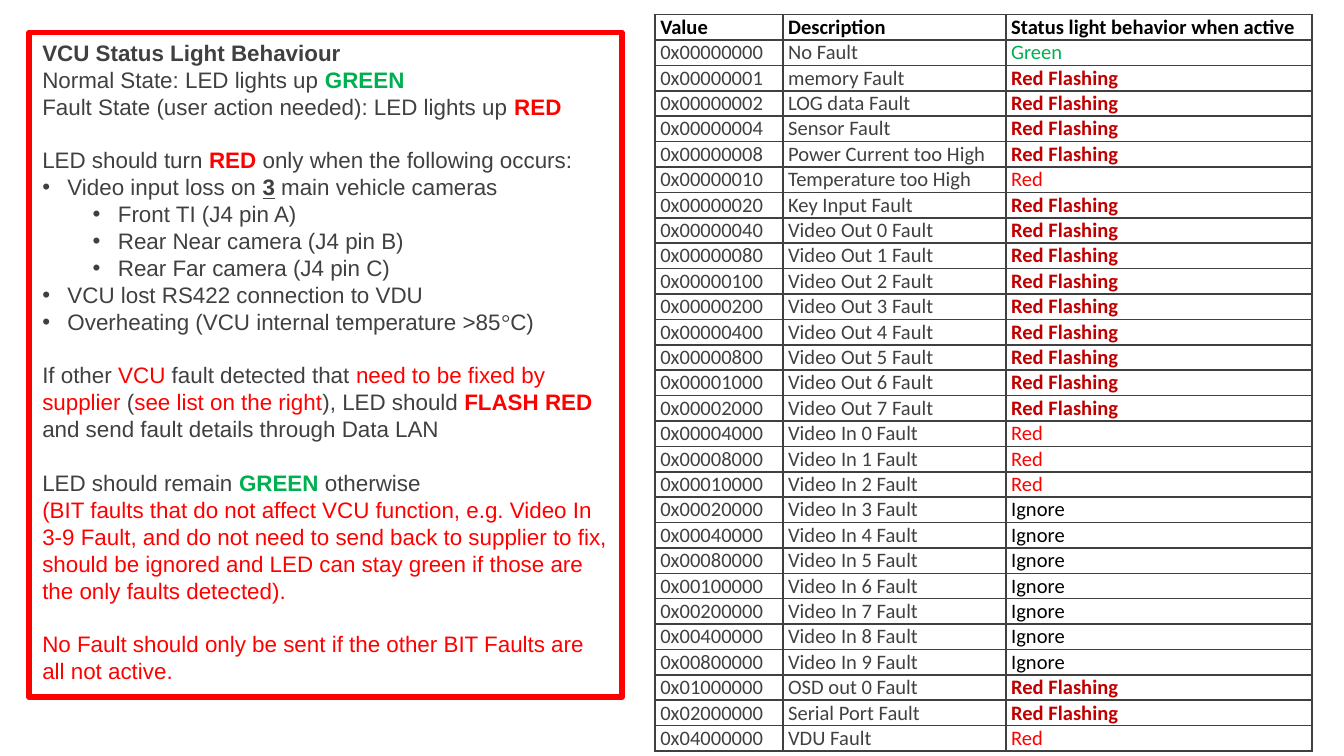
from lxml.etree import SubElement
from pptx import Presentation
from pptx.dml.color import RGBColor
from pptx.enum.shapes import MSO_SHAPE
from pptx.enum.text import MSO_ANCHOR, PP_ALIGN
from pptx.oxml.ns import qn
from pptx.util import Pt

GRAY = RGBColor(0x40, 0x40, 0x40)
BLACK = RGBColor(0x00, 0x00, 0x00)
GREEN = RGBColor(0x00, 0xB0, 0x50)
RED = RGBColor(0xFF, 0x00, 0x00)
DARK_RED = RGBColor(0xC0, 0x00, 0x00)
LINE_PITCH = Pt(14.4)
ROW_HEIGHT = Pt(13.2)


def add_bullet(paragraph, indent):
    properties = paragraph._p.get_or_add_pPr()
    properties.set("marL", str(Pt(indent)))
    properties.set("indent", str(Pt(-13.5)))
    SubElement(properties, qn("a:buFont")).set("typeface", "Arial")
    SubElement(properties, qn("a:buChar")).set("char", "•")


def add_borders(cell):
    properties = cell._tc.get_or_add_tcPr()
    for position, side in enumerate(("lnL", "lnR", "lnT", "lnB")):
        border = properties.makeelement(qn(f"a:{side}"), {"w": str(Pt(1))})
        fill = SubElement(border, qn("a:solidFill"))
        SubElement(fill, qn("a:srgbClr")).set("val", str(GRAY))
        properties.insert(position, border)


presentation = Presentation()
presentation.slide_width = Pt(720)
presentation.slide_height = Pt(405)
slide = presentation.slides.add_slide(presentation.slide_layouts[6])

faults = [
    ("No Fault", "Green"),
    ("memory Fault", "Red Flashing"),
    ("LOG data Fault", "Red Flashing"),
    ("Sensor Fault", "Red Flashing"),
    ("Power Current too High", "Red Flashing"),
    ("Temperature too High", "Red"),
    ("Key Input Fault", "Red Flashing"),
    *[(f"Video Out {number} Fault", "Red Flashing") for number in range(8)],
    *[(f"Video In {number} Fault", "Red" if number < 3 else "Ignore") for number in range(10)],
    ("OSD out 0 Fault", "Red Flashing"),
    ("Serial Port Fault", "Red Flashing"),
    ("VDU Fault", "Red"),
]
behavior_colors = {"Green": GREEN, "Red": RED, "Red Flashing": DARK_RED, "Ignore": BLACK}

fault_rows = [("Value", "Description", "Status light behavior when active")]
for index, (description, behavior) in enumerate(faults):
    value = 1 << (index - 1) if index else 0
    fault_rows.append((f"0x{value:08X}", description, behavior))

fault_table = slide.shapes.add_table(
    len(fault_rows), 3, Pt(351), Pt(7.8), Pt(352), ROW_HEIGHT * len(fault_rows)
).table
fault_table.horz_banding = False
for column, width in zip(fault_table.columns, (68.5, 119.5, 164)):
    column.width = Pt(width)

for row_index, row_texts in enumerate(fault_rows):
    fault_table.rows[row_index].height = ROW_HEIGHT
    for column_index, text in enumerate(row_texts):
        cell = fault_table.cell(row_index, column_index)
        cell.fill.background()
        cell.vertical_anchor = MSO_ANCHOR.BOTTOM
        cell.margin_left = cell.margin_right = Pt(2.7)
        cell.margin_top = cell.margin_bottom = 0
        add_borders(cell)
        cell.text_frame.text = text
        font = cell.text_frame.paragraphs[0].runs[0].font
        font.name = "Calibri"
        font.size = Pt(11)
        font.bold = row_index == 0 or text == "Red Flashing"
        font.color.rgb = BLACK if row_index == 0 else behavior_colors.get(text, GRAY)

rules_box = slide.shapes.add_shape(MSO_SHAPE.RECTANGLE, Pt(15.6), Pt(17.4), Pt(317.6), Pt(356.2))
rules_box.shadow.inherit = False
rules_box.fill.background()
rules_box.line.color.rgb = RED
rules_box.line.width = Pt(3)
rules = rules_box.text_frame
rules.word_wrap = True
rules.vertical_anchor = MSO_ANCHOR.TOP

# (gap before, bullet indent, runs of text, colour and bold)
rule_paragraphs = [
    (False, 0, [("VCU Status Light Behaviour", GRAY, True)]),
    (False, 0, [("Normal State: LED lights up ", GRAY, False), ("GREEN", GREEN, True)]),
    (False, 0, [("Fault State (user action needed): LED lights up ", GRAY, False), ("RED", RED, True)]),
    (True, 0, [("LED should turn ", GRAY, False), ("RED", RED, True),
               (" only when the following occurs:", GRAY, False)]),
    (False, 13.5, [("Video input loss on ", GRAY, False), ("3", GRAY, True),
                   (" main vehicle cameras", GRAY, False)]),
    (False, 40.5, [("Front TI (J4 pin A)", GRAY, False)]),
    (False, 40.5, [("Rear Near camera (J4 pin B)", GRAY, False)]),
    (False, 40.5, [("Rear Far camera (J4 pin C)", GRAY, False)]),
    (False, 13.5, [("VCU lost RS422 connection to VDU", GRAY, False)]),
    (False, 13.5, [("Overheating (VCU internal temperature >85", GRAY, False),
                   ("°", GRAY, False), ("C)", GRAY, False)]),
    (True, 0, [("If other ", GRAY, False), ("VCU", RED, False),
               (" fault detected that ", GRAY, False),
               ("need to be fixed by supplier", RED, False), (" (", GRAY, False),
               ("see list on the right", RED, False), ("), LED should ", GRAY, False),
               ("FLASH RED", RED, True),
               (" and send fault details through Data LAN", GRAY, False)]),
    (True, 0, [("LED should remain ", GRAY, False), ("GREEN", GREEN, True),
               (" otherwise", GRAY, False)]),
    (False, 0, [("(BIT faults that do not affect VCU function, e.g. Video In 3-9 Fault, "
                 "and do not need to send back to supplier to fix, should be ignored and "
                 "LED can stay green if those are the only faults detected).", RED, False)]),
    (True, 0, [("No Fault should only be sent if the other BIT Faults are all not active.",
                RED, False)]),
]

for index, (gap_before, indent, pieces) in enumerate(rule_paragraphs):
    paragraph = rules.add_paragraph() if index else rules.paragraphs[0]
    if indent:
        add_bullet(paragraph, indent)
        paragraph.level = 1 if indent > 13.5 else 0
    paragraph.alignment = PP_ALIGN.LEFT
    paragraph.line_spacing = LINE_PITCH
    if gap_before:
        paragraph.space_before = LINE_PITCH
    for text, color, bold in pieces:
        run = paragraph.add_run()
        run.text = text
        run.font.name = "Times New Roman" if text == "°" else "Arial"
        run.font.size = Pt(12)
        run.font.bold = bold
        run.font.underline = text == "3"
        run.font.color.rgb = color

presentation.save("out.pptx")
